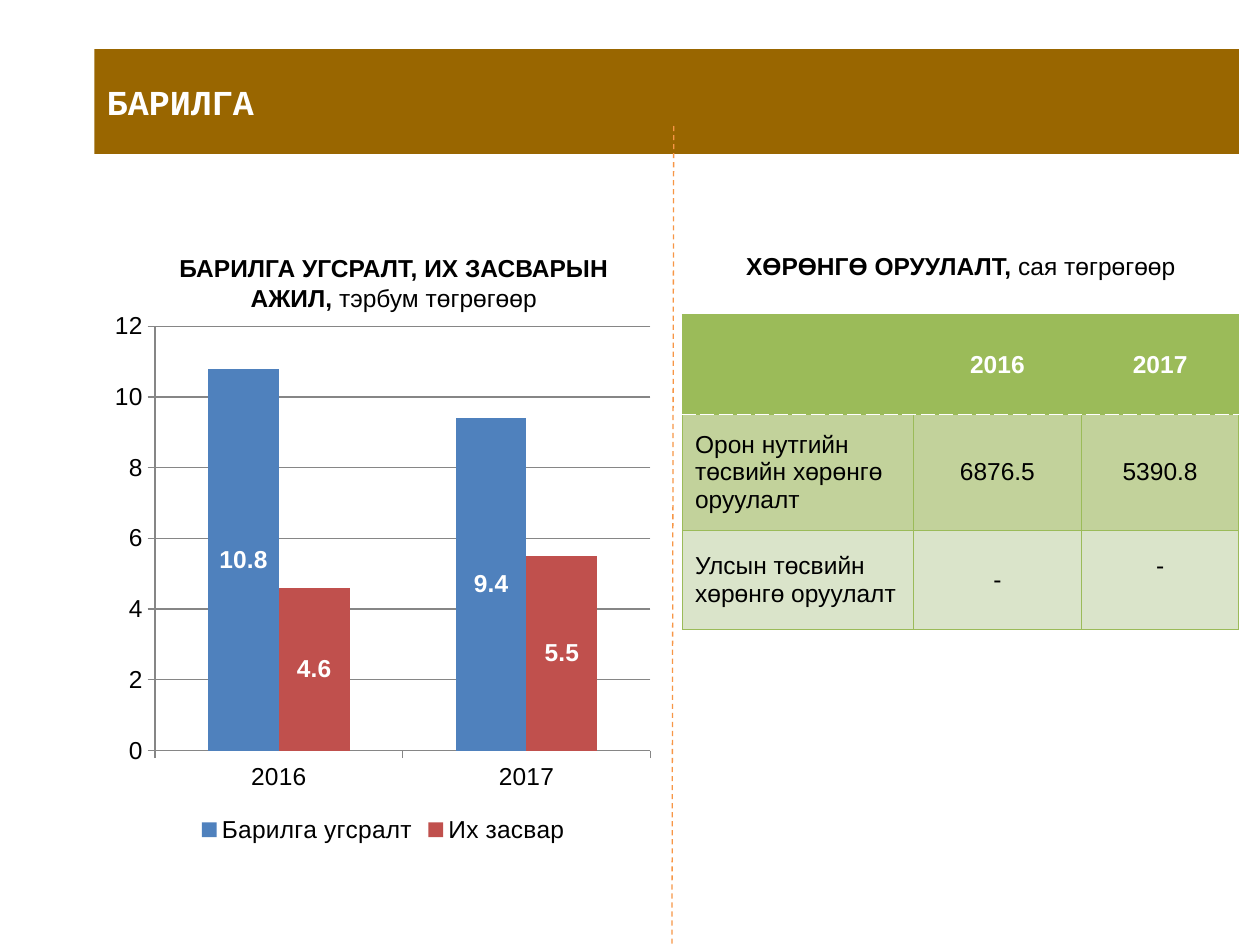
from lxml.etree import SubElement
from pptx import Presentation
from pptx.chart.data import CategoryChartData
from pptx.dml.color import RGBColor
from pptx.enum.chart import XL_CHART_TYPE as ChartType, XL_LABEL_POSITION as LabelPos
from pptx.enum.chart import XL_LEGEND_POSITION as LegendPos, XL_TICK_MARK as Tick
from pptx.enum.dml import MSO_LINE
from pptx.enum.shapes import MSO_CONNECTOR, MSO_SHAPE
from pptx.enum.text import MSO_ANCHOR as Anchor, PP_ALIGN as Align
from pptx.oxml import parse_xml
from pptx.oxml.ns import nsdecls, qn
from pptx.util import Pt

WHITE = RGBColor(0xFF, 0xFF, 0xFF)
BLACK = RGBColor(0, 0, 0)
BROWN = RGBColor(0x99, 0x66, 0x00)
GREEN = RGBColor(0x9B, 0xBB, 0x59)
MID_GREEN = RGBColor(0xC2, 0xD2, 0x9B)
PALE_GREEN = RGBColor(0xDA, 0xE4, 0xCA)
BLUE = RGBColor(0x4F, 0x81, 0xBD)
RED = RGBColor(0xC0, 0x50, 0x4D)
ORANGE = RGBColor(0xF7, 0x96, 0x46)
GREY = RGBColor(0x86, 0x86, 0x86)

TITLE = "БАРИЛГА"
HEADINGS = [
    ("ХӨРӨНГӨ ОРУУЛАЛТ, ", "сая төгрөгөөр", 396, 114),
    ("БАРИЛГА УГСРАЛТ, ИХ ЗАСВАРЫН АЖИЛ, ", "тэрбум төгрөгөөр", 72, 132),
]
YEARS = ["2016", "2017"]
WORKS = [
    ("Барилга угсралт", [10.8, 9.4], BLUE),
    ("Их засвар", [4.6, 5.5], RED),
]
INVESTMENT = [
    ["", *YEARS],
    ["Орон нутгийн төсвийн хөрөнгө оруулалт", "6876.5", "5390.8"],
    ["Улсын төсвийн хөрөнгө оруулалт", "-", "-"],
]
ROW_FILLS = [GREEN, MID_GREEN, PALE_GREEN]
ROW_HEIGHTS = [57, 66, 57]
COLUMN_WIDTHS = [132, 96, 90]
PLOT_AREA = {"x": 0.09, "y": 0.04, "w": 0.89, "h": 0.78}


def set_font(font, color, bold=False, size=14, name="Arial"):
    font.name, font.size, font.bold = name, Pt(size), bold
    font.color.rgb = color


def add_banner(slide):
    banner = slide.shapes.add_shape(MSO_SHAPE.RECTANGLE, Pt(54), Pt(28), Pt(654), Pt(60))
    banner.shadow.inherit = False
    banner.fill.solid()
    banner.fill.fore_color.rgb = BROWN
    banner.line.fill.background()
    banner.text_frame.vertical_anchor = Anchor.MIDDLE
    paragraph = banner.text_frame.paragraphs[0]
    paragraph.text = TITLE
    paragraph.alignment = Align.JUSTIFY
    set_font(paragraph.font, WHITE, True, 20, "Courier New")


def add_heading(slide, subject, unit, left, top):
    frame = slide.shapes.add_textbox(Pt(left), Pt(top), Pt(306), Pt(50)).text_frame
    frame.word_wrap = True
    frame.vertical_anchor = Anchor.BOTTOM
    paragraph = frame.paragraphs[0]
    paragraph.alignment = Align.CENTER
    for words, bold in ((subject, True), (unit, False)):
        run = paragraph.add_run()
        run.text = words
        set_font(run.font, BLACK, bold)


def add_works_chart(slide):
    works = CategoryChartData()
    works.categories = YEARS
    for name, values, _ in WORKS:
        works.add_series(name, values)
    chart = slide.shapes.add_chart(
        ChartType.COLUMN_CLUSTERED, Pt(60), Pt(174), Pt(318), Pt(311), works).chart
    set_font(chart.font, BLACK)
    chart.has_title = False
    chart.has_legend = True
    chart.legend.position = LegendPos.BOTTOM
    chart.legend.include_in_layout = False

    plot = chart.plots[0]
    plot.vary_by_categories = False
    plot.gap_width, plot.overlap = 150, 0
    for series, (_, _, color) in zip(plot.series, WORKS):
        series.format.fill.solid()
        series.format.fill.fore_color.rgb = color
        labels = series.data_labels
        labels.show_value = True
        labels.position = LabelPos.CENTER
        set_font(labels.font, WHITE, True)

    scale = chart.value_axis
    scale.minimum_scale, scale.maximum_scale, scale.major_unit = 0, 12, 2
    scale.has_major_gridlines = True
    for line in (scale.format.line, chart.category_axis.format.line,
                 scale.major_gridlines.format.line):
        line.color.rgb = GREY
        line.width = Pt(0.75)
    for axis in (scale, chart.category_axis):
        axis.major_tick_mark = Tick.OUTSIDE

    area = plot._element.getparent()
    for layout in area.findall(qn("c:layout")):
        area.remove(layout)
    settings = [("layoutTarget", "inner"), ("xMode", "edge"), ("yMode", "edge"),
                *PLOT_AREA.items()]
    entries = "".join(f'<c:{tag} val="{value}"/>' for tag, value in settings)
    area.insert(0, parse_xml(
        f'<c:layout {nsdecls("c")}><c:manualLayout>{entries}</c:manualLayout></c:layout>'))


def set_border(cell, side, color, width=0.75, dash="solid"):
    border = SubElement(cell._tc.get_or_add_tcPr(), qn(f"a:ln{side}"), w=str(Pt(width)))
    fill = SubElement(border, qn("a:solidFill"))
    SubElement(fill, qn("a:srgbClr"), val=str(color))
    SubElement(border, qn("a:prstDash"), val=dash)


def add_investment_table(slide):
    table = slide.shapes.add_table(
        len(INVESTMENT), len(COLUMN_WIDTHS), Pt(390), Pt(180),
        Pt(sum(COLUMN_WIDTHS)), Pt(sum(ROW_HEIGHTS))).table
    for column, width in zip(table.columns, COLUMN_WIDTHS):
        column.width = Pt(width)
    for r, (entries, height) in enumerate(zip(INVESTMENT, ROW_HEIGHTS)):
        table.rows[r].height = Pt(height)
        for c, entry in enumerate(entries):
            cell = table.cell(r, c)
            for side in "LRTB":
                if (r, side) in ((0, "B"), (1, "T")):
                    set_border(cell, side, WHITE, 0.9, "sysDash")
                else:
                    set_border(cell, side, GREEN)
            cell.fill.solid()
            cell.fill.fore_color.rgb = ROW_FILLS[r]
            cell.vertical_anchor = Anchor.MIDDLE
            paragraph = cell.text_frame.paragraphs[0]
            paragraph.text = entry
            paragraph.alignment = Align.CENTER if c else Align.LEFT
            set_font(paragraph.font, BLACK if r else WHITE, r == 0)
    table.cell(2, 2).margin_bottom = Pt(20)


def add_divider(slide):
    divider = slide.shapes.add_connector(
        MSO_CONNECTOR.STRAIGHT, Pt(385), Pt(72), Pt(384), Pt(540))
    divider.line.color.rgb = ORANGE
    divider.line.width = Pt(0.75)
    divider.line.dash_style = MSO_LINE.DASH
    SubElement(divider._element.spPr, qn("a:effectLst"))


def main():
    deck = Presentation()
    deck.slide_width, deck.slide_height = Pt(720), Pt(540)
    slide = deck.slides.add_slide(deck.slide_layouts[6])
    add_works_chart(slide)
    add_investment_table(slide)
    add_banner(slide)
    for heading in HEADINGS:
        add_heading(slide, *heading)
    add_divider(slide)
    deck.save("out.pptx")


if __name__ == "__main__":
    main()
